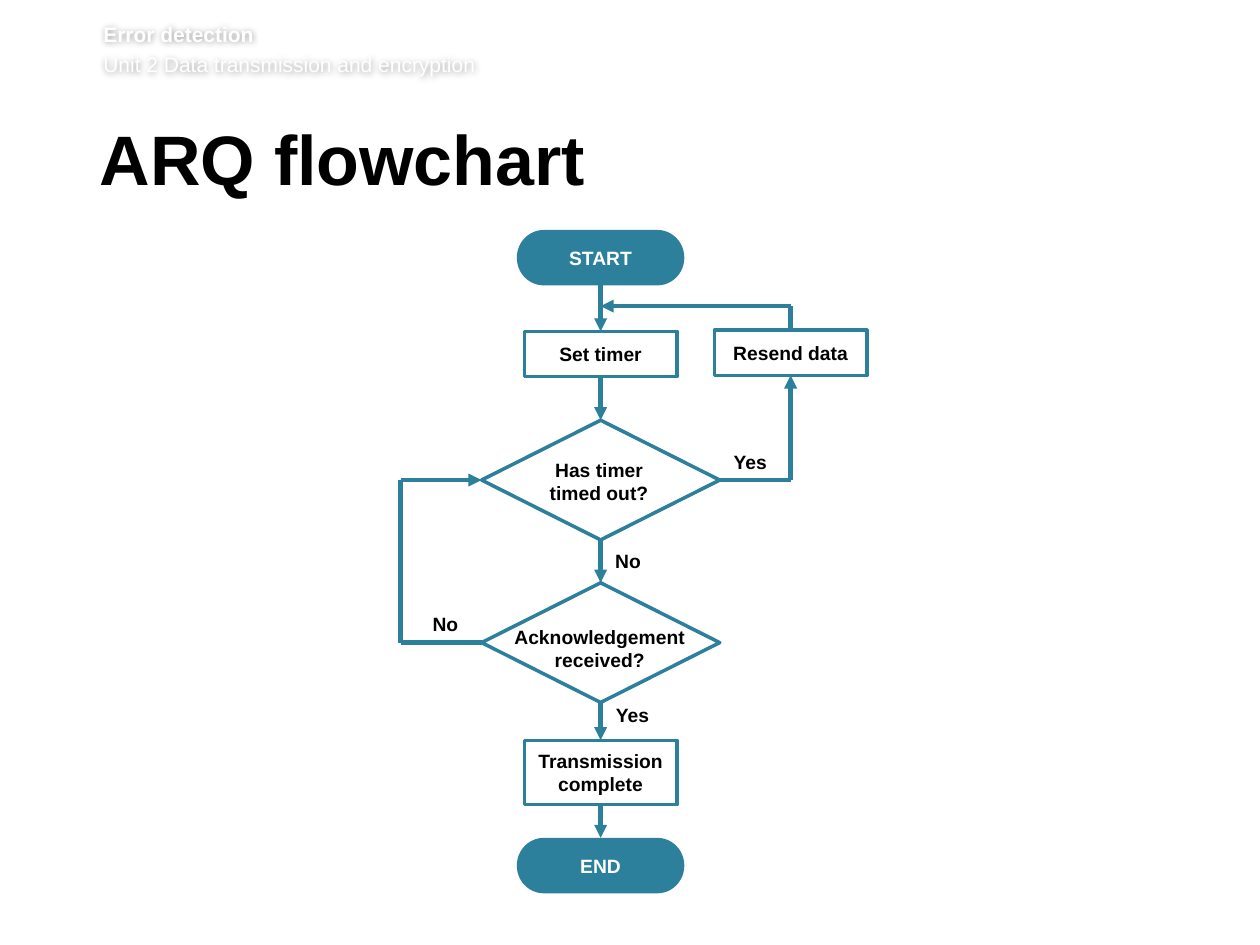
"""Builds a slide with the ARQ error detection flowchart."""
import dataclasses

import lxml.etree
import pptx
import pptx.dml.color
import pptx.enum.shapes
import pptx.enum.text
import pptx.oxml
import pptx.oxml.ns
import pptx.util

SHAPE = pptx.enum.shapes.MSO_SHAPE
ALIGN = pptx.enum.text.PP_ALIGN
ANCHOR = pptx.enum.text.MSO_ANCHOR
TOP, LEFT, BOTTOM, RIGHT = range(4)
COLUMNS, ROWS = 100, 75


@dataclasses.dataclass(frozen=True)
class Theme:
    """Colours and type sizes of the slide."""
    font: str = "Arial"
    teal: str = "2C809C"
    black: str = "000000"
    white: str = "FFFFFF"
    header_size: float = 12
    title_size: float = 40
    label_size: float = 11
    outline: float = 2
    flow_line: float = 2.5


THEME = Theme()


@dataclasses.dataclass(frozen=True)
class Box:
    """An area measured in columns and rows of the slide grid."""
    left: float
    top: float
    width: float
    height: float

    def inside(self, left, top, width=0, height=0):
        """Return an area placed relative to this one."""
        return Box(self.left + left, self.top + top, width, height)

    def lengths(self):
        """Return left, top, width and height as lengths."""
        return [pptx.util.Inches(cells / 10) for cells in dataclasses.astuple(self)]


def colour(code):
    """Return the colour for a hexadecimal code."""
    return pptx.dml.color.RGBColor.from_string(code)


def add_span(para, text, size, code, bold=True):
    """Add one formatted run to a paragraph."""
    span = para.add_run()
    span.text = text
    span.font.size = pptx.util.Pt(size)
    span.font.bold = bold
    span.font.color.rgb = colour(code)
    span.font.name = THEME.font


def add_shadow(shape):
    """Give an unfilled text box a soft dark shadow behind its letters."""
    shape._element.spPr.append(pptx.oxml.parse_xml(
        f'<a:effectLst {pptx.oxml.ns.nsdecls("a")}>'
        '<a:outerShdw blurRad="50800" dist="0" dir="0" algn="ctr" rotWithShape="0">'
        f'<a:srgbClr val="{THEME.black}"><a:alpha val="40000"/></a:srgbClr>'
        '</a:outerShdw></a:effectLst>'))


def set_frame(frame, left, top, right, bottom, anchor):
    """Set wrapping, margins in inches and anchor of a text frame."""
    frame.word_wrap = True
    frame.margin_left, frame.margin_top, frame.margin_right, frame.margin_bottom = [
        pptx.util.Inches(margin) for margin in (left, top, right, bottom)]
    frame.vertical_anchor = anchor


def add_header(page, box):
    """Write the topic and unit lines above the title."""
    header = page.shapes.add_textbox(*box.lengths())
    add_shadow(header)
    frame = header.text_frame
    set_frame(frame, 0, 0, 0, 0.05, ANCHOR.TOP)
    topic, unit = frame.paragraphs[0], frame.add_paragraph()
    unit.space_before = pptx.util.Pt(2.9)
    add_span(topic, "Error detection", THEME.header_size, THEME.white)
    add_span(unit, "Unit 2 Data transmission and encryption",
             THEME.header_size, THEME.white, bold=False)


def add_title(page, box):
    """Place and format the title placeholder."""
    title = page.shapes.title
    title.left, title.top, title.width, title.height = box.lengths()
    set_frame(title.text_frame, 0, 0.05, 0.1, 0.05, ANCHOR.TOP)
    para = title.text_frame.paragraphs[0]
    para.alignment = ALIGN.LEFT
    para.line_spacing = pptx.util.Pt(39)
    add_span(para, "ARQ flowchart", THEME.title_size, THEME.black)


def add_node(page, kind, box, text=""):
    """Add a flowchart symbol, filled only when it is a terminator."""
    node = page.shapes.add_shape(kind, *box.lengths())
    node.shadow.inherit = False
    filled = kind == SHAPE.FLOWCHART_TERMINATOR
    if filled:
        node.fill.solid()
        node.fill.fore_color.rgb = colour(THEME.teal)
        node.line.fill.background()
    else:
        node.fill.background()
        node.line.color.rgb = colour(THEME.teal)
        node.line.width = pptx.util.Pt(THEME.outline)
    if text:
        set_frame(node.text_frame, 0.1, 0.05, 0.1, 0.05, ANCHOR.MIDDLE)
        para = node.text_frame.paragraphs[0]
        para.alignment = ALIGN.CENTER
        add_span(para, text, THEME.label_size, THEME.white if filled else THEME.black)
    return node


def add_label(page, box, text):
    """Add a centred text box."""
    frame = page.shapes.add_textbox(*box.lengths()).text_frame
    set_frame(frame, 0.1, 0.05, 0.1, 0.05, ANCHOR.TOP)
    para = frame.paragraphs[0]
    para.alignment = ALIGN.CENTER
    add_span(para, text, THEME.label_size, THEME.black)


def add_flow(page, start, end, arrow=True):
    """Draw a line between two ends, each a Box corner or a (node, side) pair."""
    points = [stop.lengths()[:2] if isinstance(stop, Box) else (0, 0)
              for stop in (start, end)]
    flow = page.shapes.add_connector(
        pptx.enum.shapes.MSO_CONNECTOR.STRAIGHT, *points[0], *points[1])
    if not isinstance(start, Box):
        flow.begin_connect(*start)
    if not isinstance(end, Box):
        flow.end_connect(*end)
    flow.line.color.rgb = colour(THEME.teal)
    flow.line.width = pptx.util.Pt(THEME.flow_line)
    if arrow:
        outline = flow.line._get_or_add_ln()
        lxml.etree.SubElement(outline, pptx.oxml.ns.qn("a:tailEnd"), type="triangle")
    lxml.etree.SubElement(flow._element.spPr, pptx.oxml.ns.qn("a:effectLst"))


def add_flowchart(page, box):
    """Draw the steps, their labels and the flows between them."""
    centre, resend_centre, loop_column = 16.67, 31.75, 0.8
    return_row, timeout_row, received_row = 6.3, 20.1, 33
    steps = [
        (SHAPE.FLOWCHART_TERMINATOR, 0.25, 13.3, 4.4, "START"),
        (SHAPE.FLOWCHART_PROCESS, 8.3, 12.1, 3.6, "Set timer"),
        (SHAPE.FLOWCHART_DECISION, 15.35, 18.9, 9.5, ""),
        (SHAPE.FLOWCHART_DECISION, 28.25, 18.9, 9.5, ""),
        (SHAPE.FLOWCHART_PROCESS, 40.75, 12.1, 5.1, "Transmission complete"),
        (SHAPE.FLOWCHART_TERMINATOR, 48.5, 13.3, 4.4, "END"),
    ]
    nodes = [add_node(page, kind, box.inside(centre - width / 2, top, width, height), text)
             for kind, top, width, height, text in steps]
    resend = add_node(page, SHAPE.FLOWCHART_PROCESS,
                      box.inside(resend_centre - 6.05, 8.2, 12.1, 3.6), "Resend data")
    timeout, received = nodes[2], nodes[3]

    for left, top, width, height, text in (
            (10.7, 17.9, 11.7, 5.8, "Has timer timed out?"),
            (6.95, 31.1, 19.3, 5.8, "Acknowledgement received?"),
            (25, 17.25, 7.1, 3.5, "Yes"),
            (16.7, 37.3, 5, 3.5, "Yes"),
            (0.8, 30.1, 7.1, 3.5, "No"),
            (15.3, 25.1, 7.1, 3.5, "No")):
        add_label(page, box.inside(left, top, width, height), text)

    for upper, lower in zip(nodes, nodes[1:]):
        add_flow(page, (upper, BOTTOM), (lower, TOP))

    resend_turn = box.inside(resend_centre, timeout_row)
    add_flow(page, (timeout, RIGHT), resend_turn, arrow=False)
    add_flow(page, resend_turn, (resend, BOTTOM))

    return_turn = box.inside(resend_centre, return_row)
    add_flow(page, (resend, TOP), return_turn, arrow=False)
    add_flow(page, return_turn, box.inside(centre, return_row))

    loop_bottom = box.inside(loop_column, received_row)
    loop_top = box.inside(loop_column, timeout_row)
    add_flow(page, (received, LEFT), loop_bottom, arrow=False)
    add_flow(page, loop_bottom, loop_top, arrow=False)
    add_flow(page, loop_top, (timeout, LEFT))


def main():
    """Build and save the deck."""
    deck = pptx.Presentation()
    deck.slide_width, deck.slide_height = Box(0, 0, COLUMNS, ROWS).lengths()[2:]
    page = deck.slides.add_slide(deck.slide_layouts.get_by_name("Title Only"))
    add_header(page, Box(8.2, 1.7, 88.2, 4.9))
    add_title(page, Box(7.9, 9.9, 85.5, 7.3))
    add_flowchart(page, Box(31, 18, 38, 53))
    deck.save("out.pptx")


if __name__ == "__main__":
    main()
